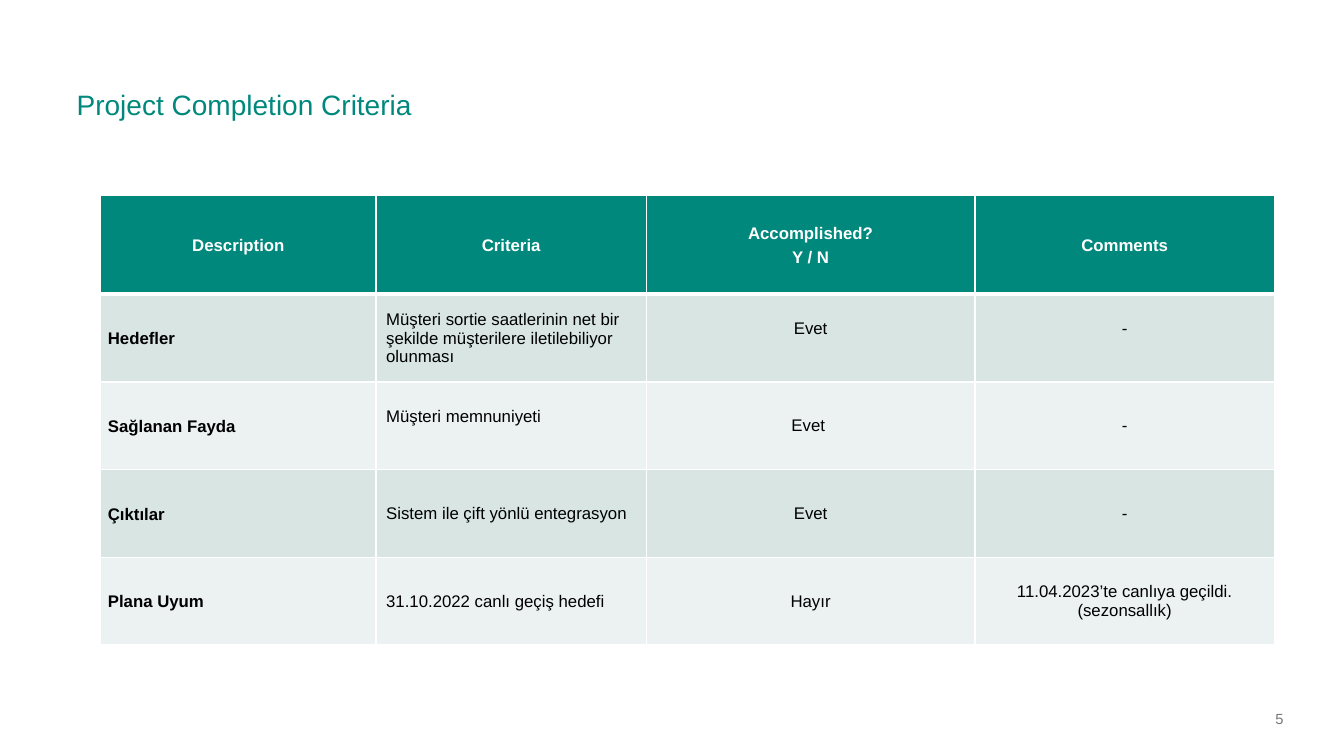
from lxml import etree
from pptx import Presentation
from pptx import util as u
from pptx.dml.color import RGBColor
from pptx.enum import text as t
from pptx.oxml import ns

COLORS = {
    "teal": "00887D",
    "band_dark": "D8E5E3",
    "band_light": "ECF2F1",
    "white": "FFFFFF",
    "black": "000000",
    "gray": "777777",
}
FONT = "Arial"
HEADERS = [["Description"], ["Criteria"], ["Accomplished?", "Y / N"], ["Comments"]]
ROWS = [
    ["Hedefler",
     "Müşteri sortie saatlerinin net bir şekilde müşterilere iletilebiliyor olunması",
     "Evet", "-"],
    ["Sağlanan Fayda", "Müşteri memnuniyeti", "Evet ", "-"],
    ["Çıktılar", "Sistem ile çift yönlü entegrasyon", "Evet", "-"],
    ["Plana Uyum", "31.10.2022 canlı geçiş hedefi", "Hayır",
     "11.04.2023’te canlıya geçildi. (sezonsallık)"],
]
# Body cells (row, column) whose text sits one line higher
RAISED = {(1, 2), (1, 3), (2, 1)}
COLUMN_WIDTHS = [2.73, 2.68, 3.26, 2.97]
HEADER_HEIGHT, ROW_HEIGHT = 0.98, 0.87


def rgb(name):
    return RGBColor.from_string(COLORS[name])


def add_run(paragraph, wording, size, color, bold=False):
    run = paragraph.add_run()
    run.text = wording
    run.font.name = FONT
    run.font.size = u.Pt(size)
    run.font.bold = bold
    run.font.color.rgb = rgb(color)


def set_margins(target, left, top, right, bottom):
    target.margin_left, target.margin_top = u.Inches(left), u.Inches(top)
    target.margin_right, target.margin_bottom = u.Inches(right), u.Inches(bottom)


def set_borders(cell, widths):
    properties = cell._tc.get_or_add_tcPr()
    for position, (side, width) in enumerate(widths.items()):
        line = etree.Element(ns.qn(f"a:ln{side}"), w=str(u.Pt(width)))
        fill = etree.SubElement(line, ns.qn("a:solidFill"))
        etree.SubElement(fill, ns.qn("a:srgbClr"), val=COLORS["white"])
        properties.insert(position, line)


def fill_cell(cell, lines, fill, color, bold, centered, label, raised=False):
    cell.fill.solid()
    cell.fill.fore_color.rgb = rgb(fill)
    cell.vertical_anchor = t.MSO_ANCHOR.MIDDLE
    if label:
        set_margins(cell, 0.07, 0, 0.07, 0)
    else:
        set_margins(cell, 0.1, 0.05, 0.1, 0.24 if raised else 0.05)
    frame = cell.text_frame
    for index, wording in enumerate(lines):
        paragraph = frame.add_paragraph() if index else frame.paragraphs[0]
        paragraph.alignment = t.PP_ALIGN.CENTER if centered else t.PP_ALIGN.LEFT
        if label:
            paragraph.line_spacing = 1.07
            paragraph.space_before = u.Pt(3 if index else 0)
        add_run(paragraph, wording, 12, color, bold)


def add_title(slide, left, top, width, height):
    title = slide.shapes.title
    title.left, title.top = u.Inches(left), u.Inches(top)
    title.width, title.height = u.Inches(width), u.Inches(height)
    frame = title.text_frame
    frame.auto_size = t.MSO_AUTO_SIZE.NONE
    frame.word_wrap = True
    frame.vertical_anchor = t.MSO_ANCHOR.BOTTOM
    set_margins(frame, 0, 0, 0, 0)
    paragraph = frame.paragraphs[0]
    paragraph.alignment = t.PP_ALIGN.LEFT
    paragraph.line_spacing = 0.9
    add_run(paragraph, "Project Completion Criteria", 20, "teal")


def add_criteria_table(slide, left, top, width, height):
    table = slide.shapes.add_table(
        len(ROWS) + 1, len(HEADERS), u.Inches(left), u.Inches(top),
        u.Inches(width), u.Inches(height)).table
    table.first_row = table.horz_banding = False
    for column, column_width in zip(table.columns, COLUMN_WIDTHS):
        column.width = u.Inches(column_width)
    for index, row in enumerate(table.rows):
        row.height = u.Inches(ROW_HEIGHT if index else HEADER_HEIGHT)

    # Header row
    for column, lines in enumerate(HEADERS):
        fill_cell(table.cell(0, column), lines, "teal", "white", True, True, True)

    # Body rows in alternating bands
    for row, wordings in enumerate(ROWS, 1):
        band = "band_dark" if row % 2 else "band_light"
        for column, wording in enumerate(wordings):
            is_label = column == 0
            fill_cell(table.cell(row, column), [wording], band, "black", is_label,
                      column > 1, is_label, (row, column) in RAISED)

    # White rules, thicker below the header
    for row in range(len(ROWS) + 1):
        widths = {"L": 1, "R": 1, "T": 3 if row == 1 else 1, "B": 1 if row else 3}
        for column in range(len(HEADERS)):
            set_borders(table.cell(row, column), widths)


def add_page_number(slide, left, top, width, height):
    box = slide.shapes.add_textbox(
        u.Inches(left), u.Inches(top), u.Inches(width), u.Inches(height))
    frame = box.text_frame
    frame.word_wrap = True
    frame.vertical_anchor = t.MSO_ANCHOR.MIDDLE
    set_margins(frame, 0, 0.05, 0, 0.05)
    add_run(frame.paragraphs[0], "5", 10.5, "gray")


def main():
    presentation = Presentation()
    presentation.slide_width = u.Inches(13.33)
    presentation.slide_height = u.Inches(7.5)
    slide = presentation.slides.add_slide(presentation.slide_layouts[5])
    add_title(slide, 0.76, 0.77, 11.89, 0.44)
    add_criteria_table(slide, 1, 1.94, sum(COLUMN_WIDTHS),
                       HEADER_HEIGHT + len(ROWS) * ROW_HEIGHT)
    add_page_number(slide, 12.65, 6.93, 0.64, 0.4)
    presentation.save("out.pptx")


if __name__ == "__main__":
    main()
